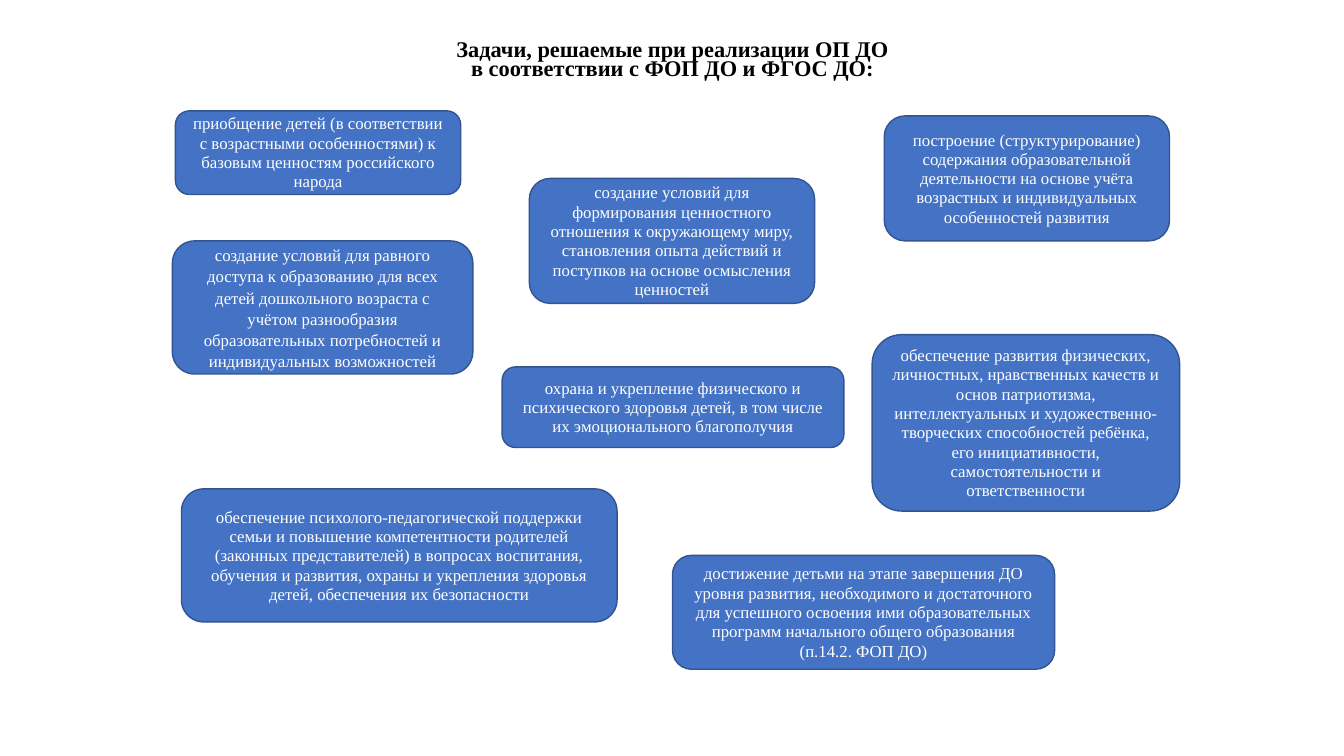
from pptx import Presentation
from pptx.dml.color import RGBColor
from pptx.enum.shapes import MSO_SHAPE
from pptx.enum.text import MSO_ANCHOR, MSO_AUTO_SIZE, PP_ALIGN
from pptx.util import Inches, Pt

BLACK = RGBColor(0x00, 0x00, 0x00)
WHITE = RGBColor(0xFF, 0xFF, 0xFF)
BLUE = RGBColor(0x44, 0x72, 0xC4)
DARK_BLUE = RGBColor(0x32, 0x54, 0x91)

TITLE = "Задачи, решаемые при реализации ОП ДО\nв соответствии с ФОП ДО и ФГОС ДО:"
LINE_SPACING = Pt(13.8)

TASKS = [
    ((1.71, 2.39, 2.98, 1.32), 1.05,
     "создание условий для равного доступа к образованию для всех детей дошкольного "
     "возраста с учётом разнообразия образовательных потребностей и индивидуальных "
     "возможностей"),
    ((6.67, 5.51, 3.79, 1.13), LINE_SPACING,
     "достижение детьми на этапе завершения ДО уровня развития, необходимого и "
     "достаточного для успешного освоения ими образовательных программ начального "
     "общего образования (п.14.2. ФОП ДО)"),
    ((5.25, 1.77, 2.83, 1.24), LINE_SPACING,
     "создание условий для формирования ценностного отношения к окружающему миру, "
     "становления опыта действий и поступков на основе осмысления ценностей"),
    ((1.74, 1.1, 2.83, 0.83), LINE_SPACING,
     "приобщение детей (в соответствии с возрастными особенностями) к базовым "
     "ценностям российского народа"),
    ((4.98, 3.64, 3.39, 0.8), LINE_SPACING,
     "охрана и укрепление физического и психического здоровья детей, в том числе их "
     "эмоционального благополучия"),
    ((8.77, 1.15, 2.83, 1.24), LINE_SPACING,
     "построение (структурирование) содержания образовательной деятельности на основе "
     "учёта возрастных и индивидуальных особенностей развития"),
    ((8.65, 3.32, 3.05, 1.75), LINE_SPACING,
     "обеспечение развития физических, личностных, нравственных качеств и основ "
     "патриотизма, интеллектуальных и художественно-творческих способностей ребёнка, "
     "его инициативности, самостоятельности и ответственности"),
    ((1.8, 4.85, 4.32, 1.32), LINE_SPACING,
     "обеспечение психолого-педагогической поддержки семьи и повышение компетентности "
     "родителей (законных представителей) в вопросах воспитания, обучения и развития, "
     "охраны и укрепления здоровья детей, обеспечения их безопасности"),
]


class TaskPage:
    """Holds the text style and the slide that receives the title and task boxes."""

    font_name = "Times New Roman"

    def __init__(self, deck):
        self.page = deck.slides.add_slide(deck.slide_layouts[5])

    def set_text(self, shape, text, size, color, spacing, anchor, bold=False):
        frame = shape.text_frame
        frame.text = text
        frame.word_wrap = True
        frame.vertical_anchor = anchor
        for para in frame.paragraphs:
            para.alignment = PP_ALIGN.CENTER
            para.line_spacing = spacing
            para.space_before = Pt(0)
            for span in para.runs:
                span.font.name = self.font_name
                span.font.size = Pt(size)
                span.font.bold = bold
                span.font.color.rgb = color

    def title(self, text, left, top, width, height):
        box = self.page.shapes.title
        box.left, box.top = Inches(left), Inches(top)
        box.width, box.height = Inches(width), Inches(height)
        self.set_text(box, text, 16, BLACK, LINE_SPACING, MSO_ANCHOR.TOP, bold=True)
        box.text_frame.auto_size = MSO_AUTO_SIZE.SHAPE_TO_FIT_TEXT

    def task(self, text, place, spacing):
        box = self.page.shapes.add_shape(
            MSO_SHAPE.FLOWCHART_ALTERNATE_PROCESS, *map(Inches, place))
        box.shadow.inherit = False
        box.fill.solid()
        box.fill.fore_color.rgb = BLUE
        box.line.color.rgb = DARK_BLUE
        box.line.width = Pt(1)
        self.set_text(box, text, 12, WHITE, spacing, MSO_ANCHOR.MIDDLE)


def main():
    deck = Presentation()
    deck.slide_width, deck.slide_height = Inches(13.33), Inches(7.5)
    tasks_page = TaskPage(deck)
    tasks_page.title(TITLE, 4.31, 0.37, 4.72, 0.49)
    for place, spacing, text in TASKS:
        tasks_page.task(text, place, spacing)
    deck.save("out.pptx")


if __name__ == "__main__":
    main()
